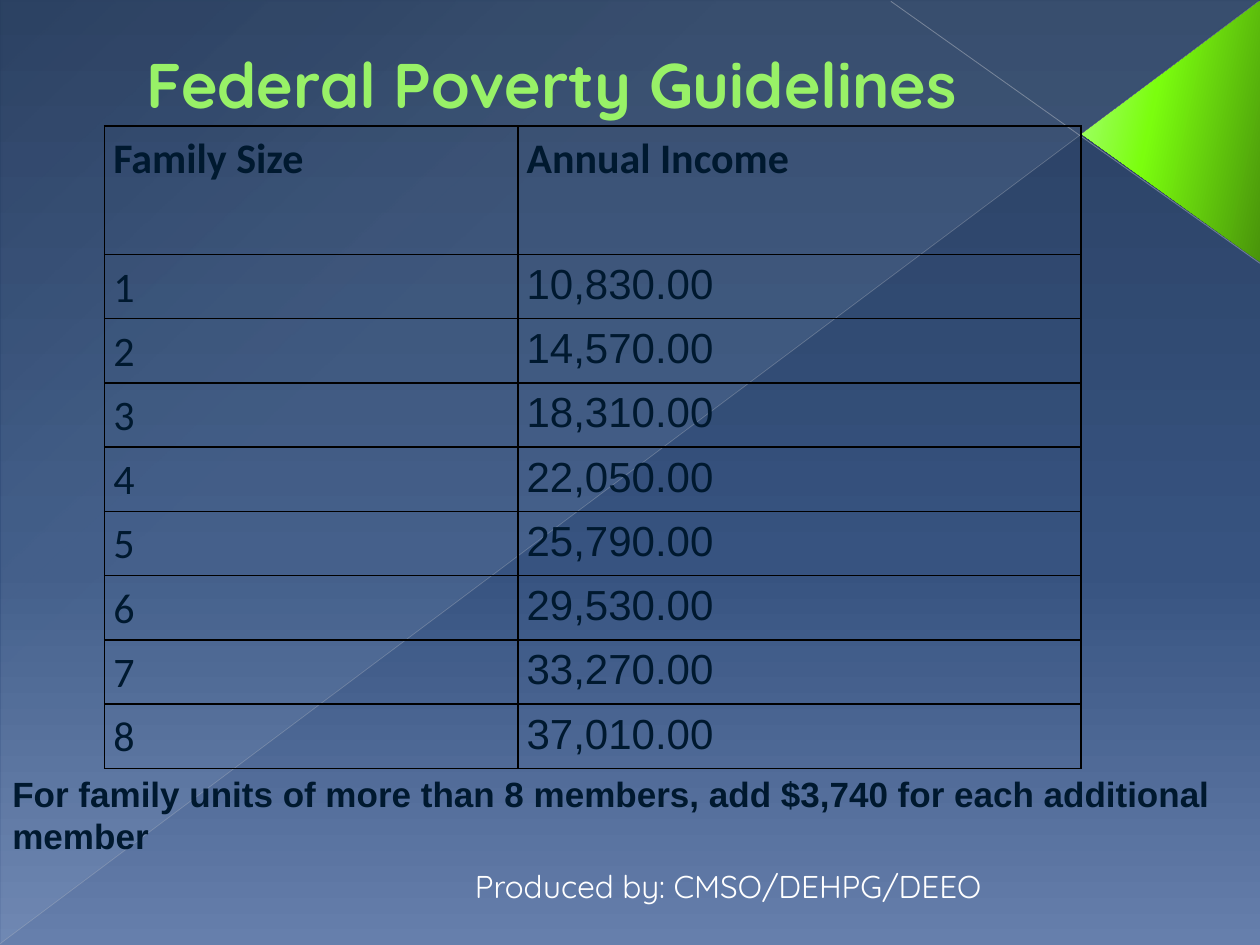
from lxml.etree import SubElement
from pptx import Presentation
from pptx.dml.color import RGBColor
from pptx.enum.shapes import MSO_CONNECTOR, MSO_SHAPE
from pptx.enum.text import MSO_ANCHOR, PP_ALIGN
from pptx.oxml.ns import qn
from pptx.util import Inches, Pt

NAVY = "00192F"


def color(text):
    return RGBColor.from_string(text)


def paint(node, hue, alpha=100):
    tint = SubElement(node, qn("a:srgbClr"), val=hue)
    if alpha < 100:
        SubElement(tint, qn("a:alpha"), val=str(alpha * 1000))


def stroke(node, tag, hue, width):
    """Add a solid line element to a cell or run."""
    line = SubElement(node, qn(tag), w=str(Pt(width)))
    paint(SubElement(line, qn("a:solidFill")), hue)
    return line


def blend(fill, root, stops, angle):
    """Replace a plain fill with a gradient of (position, hue, alpha) stops."""
    fill.solid()
    old = root.find(".//" + qn("a:solidFill"))
    grad = SubElement(old.getparent(), qn("a:gradFill"), rotWithShape="1")
    row = SubElement(grad, qn("a:gsLst"))
    for pos, *tint in stops:
        paint(SubElement(row, qn("a:gs"), pos=str(pos * 1000)), *tint)
    SubElement(grad, qn("a:lin"), ang=str(angle * 60000), scaled="0")
    old.getparent().replace(old, grad)


def write(frame, text, size=24, font="Arial", hue=NAVY, bold=False,
          align=None, anchor=None, space=None):
    frame.word_wrap = True
    if anchor is not None:
        frame.vertical_anchor = anchor
    para = frame.paragraphs[0]
    para.alignment, para.line_spacing = align, space
    run = para.add_run()
    run.text = text
    run.font.size, run.font.name, run.font.bold = Pt(size), font, bold
    run.font.color.rgb = color(hue)
    return run


class Deck:
    def __init__(self):
        self.file = Presentation()
        self.file.slide_width, self.file.slide_height = Inches(10), Inches(7.5)
        self.slide = self.file.slides.add_slide(self.file.slide_layouts[5])
        self.shapes = self.slide.shapes

    def back(self, stops, angle):
        ground = self.slide.background
        blend(ground.fill, self.slide.element.find(".//" + qn("p:bg")), stops, angle)

    def shape(self, kind, box, stops, angle, turn=0):
        item = self.shapes.add_shape(kind, *map(Inches, box))
        item.shadow.inherit = False
        item.rotation = turn
        item.element.spPr.find(qn("a:xfrm")).set("flipV", "1")
        blend(item.fill, item.element.spPr, stops, angle)
        item.line.fill.background()
        return item

    def line(self, ends, hue, width, alpha):
        item = self.shapes.add_connector(MSO_CONNECTOR.STRAIGHT, *map(Inches, ends))
        item.line.width = Pt(width)
        item.line.color.rgb = color(hue)
        tint = item.element.spPr.find(".//" + qn("a:srgbClr"))
        SubElement(tint, qn("a:alpha"), val=str(alpha * 1000))
        SubElement(item.element.spPr, qn("a:effectLst"))

    def title(self, text, box, edge, **style):
        item = self.shapes.title
        item.left, item.top, item.width, item.height = map(Inches, box)
        run = write(item.text_frame, text, **style)
        props = run.font._element
        props.insert(0, stroke(props, "a:ln", edge, 0.5))
        # Bring the title in front of the backdrop
        self.shapes.element.append(item.element)

    def text(self, text, box, **style):
        item = self.shapes.add_textbox(*map(Inches, box))
        write(item.text_frame, text, **style)

    def table(self, rows, box, widths, heights):
        grid = self.shapes.add_table(len(rows), len(widths), *map(Inches, box)).table
        grid.first_row = grid.horz_banding = False
        for col, width in zip(grid.columns, widths):
            col.width = Inches(width)
        for r, (row, height) in enumerate(zip(rows, heights)):
            grid.rows[r].height = Inches(height)
            for c, text in enumerate(row):
                font = "Arial" if r and c else "Calibri"
                self.cell(grid.cell(r, c), text, font=font, bold=r == 0, space=1.15)

    def cell(self, cell, text, **style):
        cell.margin_left = cell.margin_right = Inches(0.07)
        cell.margin_top = cell.margin_bottom = 0
        write(cell.text_frame, text, **style)
        props = cell._tc.get_or_add_tcPr()
        for side in "LRTB":
            stroke(props, "a:ln" + side, "000000", 1)
        cell.fill.background()


def main():
    deck = Deck()

    # Backdrop
    deck.back([(0, "293F60"), (60, "375380"), (100, "667FAC")], 90)
    deck.shape(MSO_SHAPE.RIGHT_TRIANGLE, (0.01, 0.01, 9.99, 7.48),
               [(0, "D6ECFF", 10), (70, "D6ECFF", 8), (100, "D6ECFF", 1)], 133)
    wedge = deck.shape(MSO_SHAPE.ISOSCELES_TRIANGLE, (8.26, 0.34, 2.07, 1.41),
                       [(0, "49940B"), (60, "7BFE0E"), (100, "A8FF7D")], 258, turn=90)
    wedge.adjustments[0] = 0.51
    deck.line((10, 2.09, 7.07, 0.01), "BFC3CB", 0.47, 45)
    deck.line((0, 7.49, 9.99, 0.01), "B7BCC5", 0.39, 35)

    # Title
    deck.title("Federal Poverty Guidelines", (0.42, 0.25, 7.92, 0.83), "589129",
               size=36, font="Quicksand", hue="98F167", bold=True,
               align=PP_ALIGN.CENTER, anchor=MSO_ANCHOR.MIDDLE)

    # Income by family size
    incomes = ["10,830.00", "14,570.00", "18,310.00", "22,050.00",
               "25,790.00", "29,530.00", "33,270.00", "37,010.00"]
    rows = [("Family Size", "Annual Income")]
    rows += [(str(n), income) for n, income in enumerate(incomes, 1)]
    deck.table(rows, (0.83, 1, 7.75, 5.08), (3.28, 4.47),
               [1.02] + [0.51] * len(incomes))

    # Notes below the table
    deck.text("For family units of more than 8 members, add $3,740 for each "
              "additional member", (0, 6.08, 10, 0.77), size=20, bold=True,
              anchor=MSO_ANCHOR.MIDDLE)
    deck.text("Produced by: CMSO/DEHPG/DEEO", (3.67, 6.83, 5.75, 0.4),
              size=18, font="Quicksand", hue="FFFFFF")

    deck.file.save("out.pptx")


if __name__ == "__main__":
    main()
